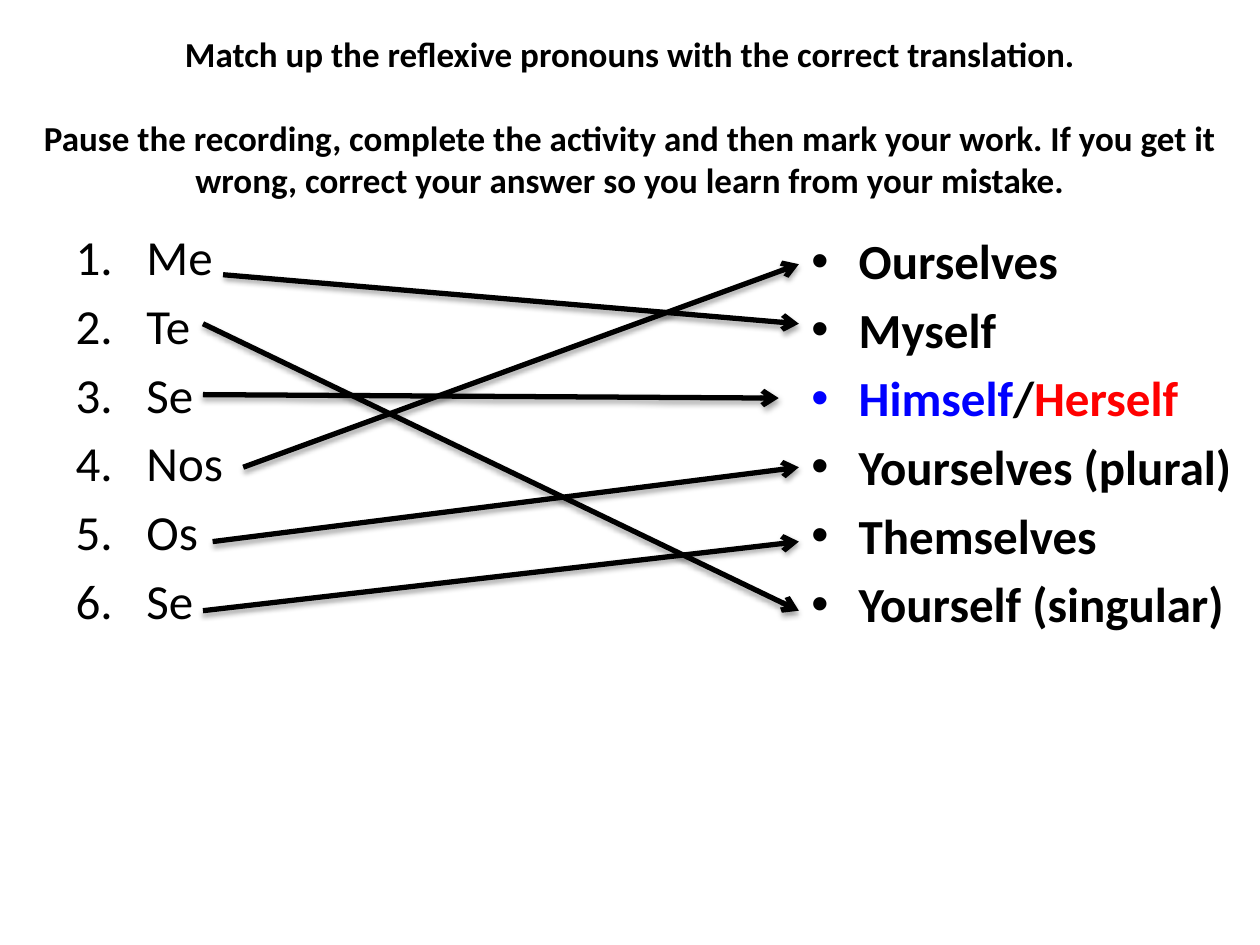
from lxml.etree import SubElement
from pptx import Presentation
from pptx.dml.color import RGBColor
from pptx.enum.shapes import MSO_CONNECTOR
from pptx.enum.text import MSO_ANCHOR, PP_ALIGN
from pptx.oxml import parse_xml
from pptx.oxml.ns import nsdecls, qn
from pptx.util import Pt

COLORS = {"black": "000000", "blue": "0000FF", "red": "FF0000"}
FONT = "Calibri"

# Each pronoun: text, arrow start (x, y), matching translation, arrow end x
PRONOUNS = [
    ("Me", 127.5, 157, 1, 456.5),
    ("Te", 116, 185, 5, 456.5),
    ("Se", 116, 225.5, 2, 445),
    ("Nos", 139, 267, 0, 456.5),
    ("Os", 121.5, 309.5, 3, 456.5),
    ("Se", 116, 349, 4, 456.5),
]
# Each translation: arrow end y, coloured runs
TRANSLATIONS = [
    (151, [("Ourselves", "black")]),
    (185, [("Myself", "black")]),
    (227.5, [("Himself", "blue"), ("/", "black"), ("Herself", "red")]),
    (267, [("Yourselves (plural)", "black")]),
    (309.5, [("Themselves", "black")]),
    (349, [("Yourself (singular)", "black")]),
]
TITLE = (
    "Match up the reflexive pronouns with the correct translation.\v\v"
    "Pause the recording, complete the activity and then mark your work. "
    "If you get it wrong, correct your answer so you learn from your mistake."
)


def place(box, left, top, width, height):
    box.left, box.top = Pt(left), Pt(top)
    box.width, box.height = Pt(width), Pt(height)


def fill_list(box, items, indent, marker, attributes, bold):
    """Write one paragraph per item, each a list of (text, colour) runs."""
    frame = box.text_frame
    for number, item in enumerate(items):
        para = frame.paragraphs[0] if number == 0 else frame.add_paragraph()
        for text, color in item:
            span = para.add_run()
            span.text = text
            span.font.name, span.font.size, span.font.bold = FONT, Pt(28), bold
            span.font.color.rgb = RGBColor.from_string(COLORS[color])
        properties = para._p.get_or_add_pPr()
        properties.set("marL", str(Pt(indent)))
        properties.set("indent", str(-Pt(indent)))
        SubElement(properties, qn(marker), attributes)


deck = Presentation()
deck.slide_width, deck.slide_height = Pt(720), Pt(540)
page = deck.slides.add_slide(deck.slide_layouts[3])
title, pronoun_box, translation_box = page.placeholders

# Title
place(title, 0, 21.6, 720, 90)
title.text_frame.text = TITLE
title.text_frame.vertical_anchor = MSO_ANCHOR.MIDDLE
heading = title.text_frame.paragraphs[0]
heading.alignment = PP_ALIGN.CENTER
for span in heading.runs:
    span.font.name, span.font.size, span.font.bold = FONT, Pt(20), True
    span.font.color.rgb = RGBColor.from_string(COLORS["black"])
for line_break in heading._p.findall(qn("a:br")):
    SubElement(line_break, qn("a:rPr"), sz="2000", b="1")

# Numbered pronouns and bulleted translations
place(pronoun_box, 36, 126, 318, 356.4)
fill_list(pronoun_box, [[(row[0], "black")] for row in PRONOUNS],
          40.5, "a:buAutoNum", {"type": "arabicPeriod"}, False)
place(translation_box, 456.5, 128.2, 263.5, 356.4)
fill_list(translation_box, [runs for _, runs in TRANSLATIONS],
          27, "a:buChar", {"char": "•"}, True)

# Matching arrows with a soft shadow
for _, start_x, start_y, match, end_x in PRONOUNS:
    end_y = TRANSLATIONS[match][0]
    arrow = page.shapes.add_connector(
        MSO_CONNECTOR.STRAIGHT, Pt(start_x), Pt(start_y), Pt(end_x), Pt(end_y))
    arrow.line.width = Pt(3)
    arrow.line.color.rgb = RGBColor.from_string(COLORS["black"])
    SubElement(arrow.line._get_or_add_ln(), qn("a:tailEnd"), type="arrow")
    arrow._element.spPr.append(parse_xml(
        f'<a:effectLst {nsdecls("a")}>'
        f'<a:outerShdw blurRad="{Pt(3.1)}" dist="{Pt(1.8)}" dir="5400000" rotWithShape="0">'
        f'<a:srgbClr val="{COLORS["black"]}"><a:alpha val="35000"/></a:srgbClr>'
        '</a:outerShdw></a:effectLst>'))

deck.save("out.pptx")
